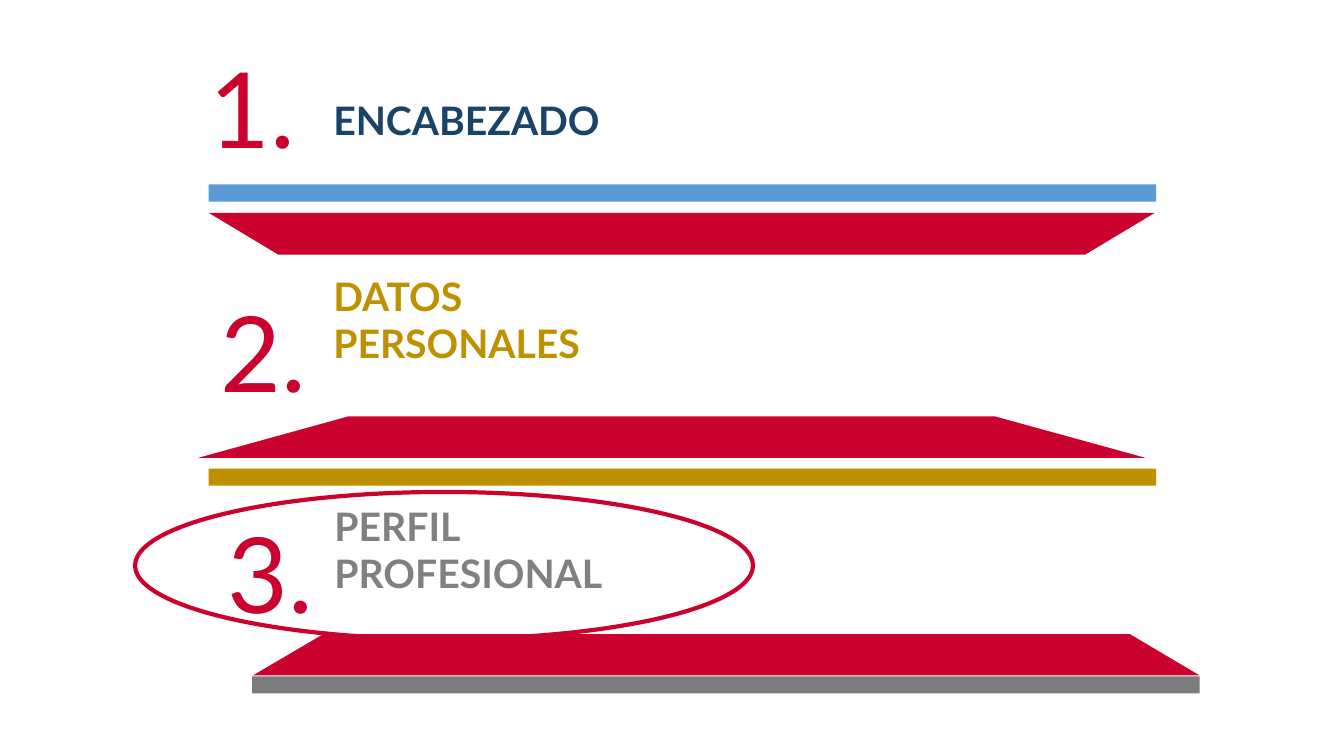
import pptx
import pptx.util
import pptx.dml.color
import pptx.enum.shapes
import pptx.enum.text

Pt = pptx.util.Pt
RGB = pptx.dml.color.RGBColor.from_string
SHAPES = pptx.enum.shapes.MSO_SHAPE
ANCHOR = pptx.enum.text.MSO_ANCHOR
ALIGN = pptx.enum.text.PP_ALIGN

theme = {
    "font": "Lato",
    "red": "CA022D", "blue": "5B9BD5", "navy": "1B4367",
    "gold": "BF9000", "bar gray": "7C7C7C", "text gray": "808080",
    "number size": 75, "title size": 28, "ring width": 3,
}

presentation = pptx.Presentation()
presentation.slide_width = Pt(960)
presentation.slide_height = Pt(540)
slide = presentation.slides.add_slide(presentation.slide_layouts[6])


def paint(shape, color):
    shape.shadow.inherit = False
    shape.fill.solid()
    shape.fill.fore_color.rgb = RGB(theme[color])
    shape.line.fill.background()


def add_label(box, lines, frame_format, font_format, color, align):
    frame = slide.shapes.add_textbox(*map(Pt, box)).text_frame
    for name, value in frame_format.items():
        setattr(frame, name, value)
    paragraph = frame.paragraphs[0]
    paragraph.alignment = align
    for index, line in enumerate(lines):
        if index:
            paragraph.add_line_break()
        run = paragraph.add_run()
        run.text = line
        for name, value in font_format.items():
            setattr(run.font, name, value)
        run.font.color.rgb = RGB(theme[color])


# Shelves: a thin bar with a red trapezoid beside it
# bar left, bar top, bar colour, trapezoid corners
shelves = [
    (149, 131.8, "blue", [(149, 152), (199, 182), (775, 182), (825, 152)]),
    (149, 334.8, "gold", [(249, 297.4), (141.8, 327), (818, 327), (710.6, 297.4)]),
    (180.2, 483.1, "bar gray", [(180.7, 482.4), (231, 452.9), (807, 452.9), (856.8, 482.4)]),
]
for left, top, color, corners in shelves:
    bar = slide.shapes.add_shape(SHAPES.RECTANGLE, Pt(left), Pt(top), Pt(676.8), Pt(12.2))
    paint(bar, color)
    first, *others = [(Pt(x), Pt(y)) for x, y in corners]
    builder = slide.shapes.build_freeform(*first)
    builder.add_line_segments(others, close=True)
    paint(builder.convert_to_shape(), "red")

# Numbered titles
number_frame = {
    "word_wrap": False,
    "vertical_anchor": ANCHOR.MIDDLE,
    "auto_size": pptx.enum.text.MSO_AUTO_SIZE.SHAPE_TO_FIT_TEXT,
}
title_frame = {**number_frame, "vertical_anchor": ANCHOR.BOTTOM}
number_font = {"name": theme["font"], "size": Pt(theme["number size"])}
title_font = {"name": theme["font"], "size": Pt(theme["title size"]), "bold": True}

sections = [
    ((141.8, 27.4, 77, 98), (231, 64.8, 229, 41), ["ENCABEZADO"], "navy"),
    ((149, 201.6, 77.8, 98), (231, 224, 261.4, 41), ["DATOS", "PERSONALES"], "gold"),
    ((154.1, 359.3, 77.8, 98), (231.8, 388.8, 274.3, 41), ["PERFIL", "PROFESIONAL"], "text gray"),
]
for number, (number_box, title_box, lines, color) in enumerate(sections, start=1):
    add_label(number_box, [f"{number}."], number_frame, number_font, "red", ALIGN.CENTER)
    add_label(title_box, lines, title_frame, title_font, color, ALIGN.LEFT)

# Ring around the third section
ring = slide.shapes.add_shape(SHAPES.OVAL, Pt(96.5), Pt(351.4), Pt(441.4), Pt(105.1))
ring.shadow.inherit = False
ring.fill.background()
ring.line.color.rgb = RGB(theme["red"])
ring.line.width = Pt(theme["ring width"])

presentation.save("out.pptx")
